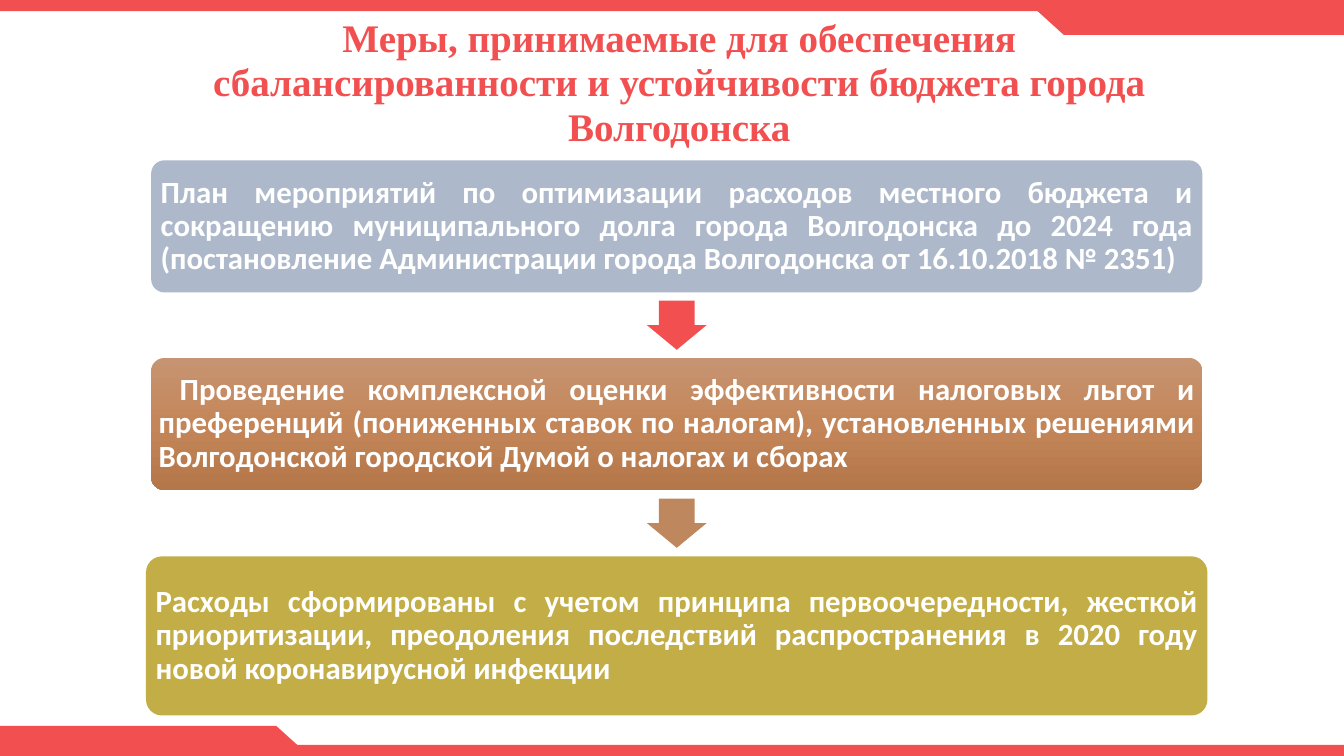
from copy import deepcopy
from dataclasses import dataclass

from pptx import Presentation
from pptx import util as u
from pptx.dml.color import RGBColor
from pptx.enum import shapes, text
from pptx.oxml.ns import qn


@dataclass(frozen=True)
class Theme:
    accent: str = "F25050"
    white: str = "FFFFFF"
    plan: str = "ADB9CA"
    review: tuple = ("C69472", "C48658", "B47749")
    review_arrow: str = "BF875D"
    spending: str = "C3AD46"
    title_font: str = "Times New Roman"
    body_font: str = "Calibri"
    title_size: float = 27.9
    body_size: float = 22


THEME = Theme()
KIND = shapes.MSO_SHAPE
WIDTH, HEIGHT = 33.87, 19.05
ROUNDING = 0.1

TITLE = ("Меры, принимаемые для обеспечения сбалансированности "
         "и устойчивости бюджета города Волгодонска")
# Box in cm, fill, text inset, first-line indent, wording, colour of the arrow below
MEASURES = [
    ((3.81, 4.04, 26.49, 3.33), THEME.plan, 0.24, 0,
     "План мероприятий по оптимизации расходов местного бюджета и сокращению "
     "муниципального долга города Волгодонска до 2024 года (постановление "
     "Администрации города Волгодонска от 16.10.2018 № 2351)", THEME.accent),
    ((3.81, 9.02, 26.49, 3.33), THEME.review, 0.19, 0.53,
     "Проведение комплексной оценки эффективности налоговых льгот и преференций "
     "(пониженных ставок по налогам), установленных решениями Волгодонской "
     "городской Думой о налогах и сборах", THEME.review_arrow),
    ((3.68, 14.02, 26.75, 4.01), THEME.spending, 0.24, 0,
     "Расходы сформированы с учетом принципа первоочередности, жесткой "
     "приоритизации, преодоления последствий распространения в 2020 году новой "
     "коронавирусной инфекции", None),
]


def paint(shape, fill):
    """Fill with one colour, or with a top-to-bottom gradient of three."""
    if isinstance(fill, str):
        shape.fill.solid()
        shape.fill.fore_color.rgb = RGBColor.from_string(fill)
        return
    shape.fill.gradient()
    shape.fill.gradient_angle = 270
    stop_list = shape._element.spPr.find(".//" + qn("a:gsLst"))
    stop_list.insert(1, deepcopy(stop_list[0]))
    for stop, position, color in zip(shape.fill.gradient_stops, (0, 0.5, 1), fill):
        stop.position = position
        stop.color.rgb = RGBColor.from_string(color)


def add_shape(slide, kind, box, fill, rotation=0):
    shape = slide.shapes.add_shape(kind, *map(u.Cm, box))
    shape.shadow.inherit = False
    shape.line.fill.background()
    shape.rotation = rotation
    paint(shape, fill)
    return shape


def write(shape, wording, *, font, size, color, align, spacing, inset, indent=0):
    frame = shape.text_frame
    frame.word_wrap = True
    frame.auto_size = text.MSO_AUTO_SIZE.NONE
    frame.vertical_anchor = text.MSO_ANCHOR.MIDDLE
    frame.margin_left = frame.margin_right = u.Cm(inset)
    frame.margin_top = frame.margin_bottom = u.Cm(inset)
    paragraph = frame.paragraphs[0]
    paragraph.alignment = align
    paragraph.line_spacing = spacing
    if indent:
        paragraph._p.get_or_add_pPr().set("indent", str(u.Cm(indent)))
    run = paragraph.add_run()
    run.text = wording
    run.font.name = font
    run.font.size = u.Pt(size)
    run.font.bold = True
    run.font.color.rgb = RGBColor.from_string(color)


def add_corner(slide, box, slant_x, rotation):
    """Draw a corner tab whose slanted end is centred on slant_x."""
    top, height = box[1], box[3]
    slant_width = 1.68
    add_shape(slide, KIND.RECTANGLE, box, THEME.accent)
    add_shape(slide, KIND.FLOWCHART_MERGE,
              (slant_x - slant_width / 2, top, slant_width, height),
              THEME.accent, rotation)


def add_frame(slide, box):
    """Draw the edge bars and the two corner tabs of the slide."""
    left, top, width, height = box
    bar, tab_width, tab_height = 0.28, 7.06, 0.76
    right, bottom = left + width, top + height
    for bar_top in (top, bottom - bar):
        add_shape(slide, KIND.RECTANGLE, (left, bar_top, width, bar), THEME.accent)
    add_corner(slide, (right - tab_width, top + 0.12, tab_width, tab_height),
               right - tab_width, 0)
    add_corner(slide, (left - 0.1, bottom - tab_height, tab_width, tab_height),
               left - 0.1 + tab_width, 180)


def add_title(slide, box):
    title = slide.shapes.title
    title.left, title.top, title.width, title.height = map(u.Cm, box)
    write(title, TITLE, font=THEME.title_font, size=THEME.title_size,
          color=THEME.accent, align=text.PP_ALIGN.CENTER, spacing=0.95, inset=0.25)


def add_measure(slide, box, fill, inset, indent, wording):
    shape = add_shape(slide, KIND.ROUNDED_RECTANGLE, box, fill)
    shape.adjustments[0] = ROUNDING
    corner_inset = 0.29 * ROUNDING * box[3]
    write(shape, wording, font=THEME.body_font, size=THEME.body_size,
          color=THEME.white, align=text.PP_ALIGN.JUSTIFY, spacing=0.9,
          inset=inset - corner_inset, indent=indent)


def add_arrow_between(slide, upper, lower, color):
    length, breadth = 1.24, 1.5
    center_x = upper[0] + upper[2] / 2
    center_y = (upper[1] + upper[3] + lower[1]) / 2
    arrow = add_shape(slide, KIND.RIGHT_ARROW,
                      (center_x - length / 2, center_y - breadth / 2, length, breadth),
                      color, 90)
    arrow.adjustments[0] = 0.6
    arrow.adjustments[1] = 0.5


def add_measures(slide):
    for measure in MEASURES:
        add_measure(slide, *measure[:-1])
    for upper, lower in zip(MEASURES, MEASURES[1:]):
        add_arrow_between(slide, upper[0], lower[0], upper[-1])


def main():
    presentation = Presentation()
    presentation.slide_width = u.Cm(WIDTH)
    presentation.slide_height = u.Cm(HEIGHT)
    slide = presentation.slides.add_slide(presentation.slide_layouts[5])
    add_frame(slide, (0, 0, WIDTH, HEIGHT))
    add_title(slide, (4.62, 0.4, 25, 3.4))
    add_measures(slide)
    presentation.save("out.pptx")


if __name__ == "__main__":
    main()
